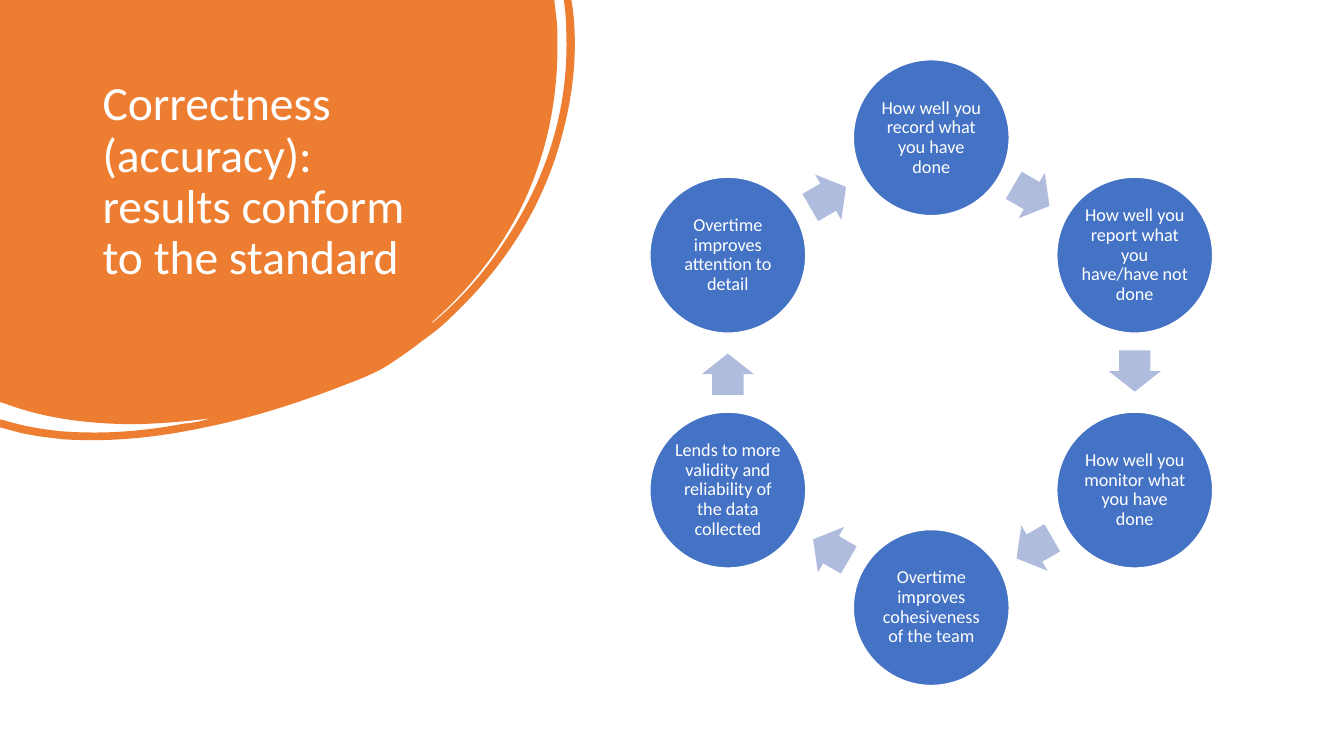
"""Build a slide with a title on an orange blob beside a six-step cycle."""
import math

import lxml.etree
import pptx
import pptx.dml.color
import pptx.enum.shapes
import pptx.enum.text
import pptx.oxml.ns
import pptx.util

Cm = pptx.util.Cm
Pt = pptx.util.Pt
qn = pptx.oxml.ns.qn

TITLE = "Correctness (accuracy): results conform to the standard"
STEPS = [
    "How well you record what you have done",
    "How well you report what you have/have not done",
    "How well you monitor what you have done",
    "Overtime improves cohesiveness of the team",
    "Lends to more validity and reliability of the data collected",
    "Overtime improves attention to detail",
]
COLOURS = {"blob": "ED7D31", "circle": "4472C4", "arrow": "B0BCDE", "white": "FFFFFF"}
FONT = "Calibri"

BLOB_WIDTH, BLOB_HEIGHT = 14.5, 11.1
BLOB = [
    [(0, 0)],
    [(13.97, 0)],
    [(14.02, 0.43)],
    [(14.05, 0.66), (14.05, 0.91), (14.05, 1.14)],
    [(14.05, 2.57), (13.77, 3.91), (13.16, 5.18)],
    [(12.6, 6.32), (11.81, 7.32), (10.85, 8.15)],
    [(10.9, 8.15), (10.95, 8.1), (10.97, 8.08)],
    [(11.66, 7.49), (12.24, 6.83), (12.73, 6.07)],
    [(13.79, 4.47), (14.35, 2.72), (14.27, 0.76)],
    [(14.27, 0.53), (14.25, 0.3), (14.22, 0.08)],
    [(14.22, 0)],
    [(14.4, 0)],
    [(14.43, 0.18)],
    [(14.58, 1.37), (14.43, 2.59), (14.05, 3.81)],
    [(13.54, 5.44), (12.62, 6.81), (11.38, 7.98)],
    [(11.15, 8.21), (10.9, 8.41), (10.64, 8.59)],
    [(10.39, 8.79), (10.13, 8.97), (9.83, 9.17)],
    [(9.53, 9.37), (9.14, 9.53), (8.74, 9.68)],
    [(7.59, 10.13), (6.4, 10.52), (5.16, 10.77)],
    [(3.99, 11.02), (2.79, 11.15), (1.6, 11.07)],
    [(1.14, 11.02), (0.71, 10.97), (0.3, 10.85)],
    [(0, 10.77)],
    [(0, 10.57)],
    [(0.1, 10.59)],
    [(0.58, 10.74), (1.07, 10.82), (1.55, 10.87)],
    [(2.62, 10.95), (3.63, 10.87), (4.67, 10.67)],
    [(4.8, 10.67), (4.9, 10.64), (5.03, 10.62)],
    [(5.13, 10.59), (5.23, 10.57), (5.33, 10.54)],
    [(4.72, 10.62), (4.09, 10.67), (3.45, 10.69)],
    [(2.34, 10.69), (1.22, 10.57), (0.18, 10.19)],
    [(0, 10.13)],
]

RING_X, RING_Y, RING_RADIUS = 23.47, 9.39, 5.92
CIRCLE_SIZE = 3.93
ARROW_WIDTH, ARROW_HEIGHT, ARROW_SHIFT = 1.04, 1.32, 0.04


def colour(name):
    """Return the named palette colour."""
    return pptx.dml.color.RGBColor.from_string(COLOURS[name])


def paint(shape, fill, line=None):
    """Give a shape a flat fill and an optional thin outline."""
    shape.shadow.inherit = False
    shape.fill.solid()
    shape.fill.fore_color.rgb = colour(fill)
    if line:
        shape.line.color.rgb = colour(line)
        shape.line.width = Pt(1)
    else:
        shape.line.fill.background()


def write(shape, text, size, align, anchor):
    """Write one white paragraph into a shape."""
    frame = shape.text_frame
    frame.text = text
    frame.word_wrap = True
    frame.auto_size = pptx.enum.text.MSO_AUTO_SIZE.NONE
    frame.vertical_anchor = anchor
    paragraph = frame.paragraphs[0]
    paragraph.alignment = align
    paragraph.line_spacing = 0.9
    paragraph.font.name = FONT
    paragraph.font.size = Pt(size)
    paragraph.font.color.rgb = colour("white")


def add_centred(slide, kind, x, y, width, height):
    """Add a preset shape around a centre point."""
    return slide.shapes.add_shape(
        kind, Cm(x - width / 2), Cm(y - height / 2), Cm(width), Cm(height))


def add_blob(slide):
    """Draw the orange shape in the corner, bending its curved segments."""
    start, *ends = [(Cm(x), Cm(y)) for x, y in (segment[-1] for segment in BLOB)]
    builder = slide.shapes.build_freeform(*start)
    builder.add_line_segments(ends, close=True)
    blob = builder.convert_to_shape()
    outline = next(blob.element.iter(qn("a:path")))
    blob.width, blob.height = Cm(BLOB_WIDTH), Cm(BLOB_HEIGHT)
    outline.set("w", str(blob.width))
    outline.set("h", str(blob.height))
    for line, segment in zip(outline.findall(qn("a:lnTo")), BLOB[1:]):
        if len(segment) == 3:
            curve = lxml.etree.Element(qn("a:cubicBezTo"))
            for x, y in segment:
                lxml.etree.SubElement(curve, qn("a:pt"), x=str(int(Cm(x))), y=str(int(Cm(y))))
            outline.replace(line, curve)
    paint(blob, "blob")


def add_title(slide):
    """Place the title and bring it in front of the blob."""
    title = slide.shapes.title
    title.left, title.top, title.width, title.height = Cm(2.33), Cm(1.88), Cm(8.94), Cm(5.64)
    write(title, TITLE, 34, pptx.enum.text.PP_ALIGN.LEFT, pptx.enum.text.MSO_ANCHOR.TOP)
    slide.shapes.element.append(title.element)


def add_cycle(slide):
    """Place the steps clockwise from the top, each followed by an arrow."""
    shapes = pptx.enum.shapes.MSO_SHAPE
    turn = 360 / len(STEPS)
    arrow_radius = RING_RADIUS * math.cos(math.radians(turn / 2))
    for index, text in enumerate(STEPS):
        angle = math.radians(index * turn)
        circle = add_centred(
            slide, shapes.OVAL,
            RING_X + RING_RADIUS * math.sin(angle), RING_Y - RING_RADIUS * math.cos(angle),
            CIRCLE_SIZE, CIRCLE_SIZE)
        paint(circle, "circle", "white")
        write(circle, text, 13, pptx.enum.text.PP_ALIGN.CENTER, pptx.enum.text.MSO_ANCHOR.MIDDLE)
        frame = circle.text_frame
        frame.margin_left = frame.margin_right = Cm(0.05)
        frame.margin_top = frame.margin_bottom = Cm(0.05)

        heading = (index + 0.5) * turn
        sine, cosine = math.sin(math.radians(heading)), math.cos(math.radians(heading))
        arrow = add_centred(
            slide, shapes.RIGHT_ARROW,
            RING_X + arrow_radius * sine - ARROW_SHIFT * cosine,
            RING_Y - arrow_radius * cosine - ARROW_SHIFT * sine,
            ARROW_WIDTH, ARROW_HEIGHT)
        arrow.rotation = heading
        arrow.adjustments[0] = 0.6
        arrow.adjustments[1] = 0.5
        paint(arrow, "arrow")


def main():
    """Build and save the slide."""
    presentation = pptx.Presentation()
    presentation.slide_width, presentation.slide_height = Cm(33.87), Cm(19.05)
    slide = presentation.slides.add_slide(presentation.slide_layouts[5])
    add_blob(slide)
    add_title(slide)
    add_cycle(slide)
    presentation.save("out.pptx")


if __name__ == "__main__":
    main()
